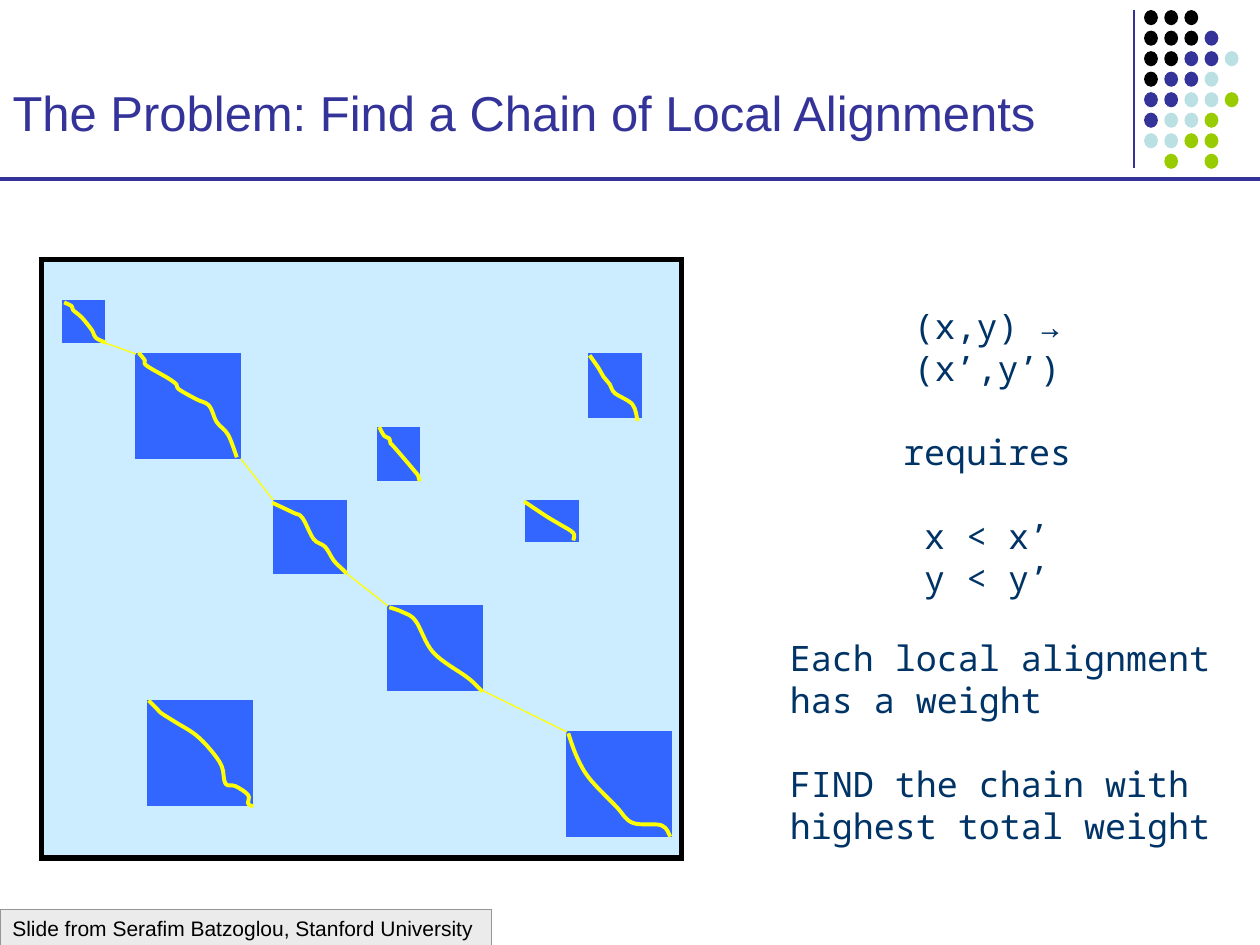
"""Build a slide about chaining local alignments in a dot plot."""
from itertools import pairwise

from lxml import etree
from pptx import Presentation
from pptx.dml.color import RGBColor
from pptx.enum import shapes, text
from pptx.oxml import ns
from pptx.util import Inches, Pt

BLACK = RGBColor(0x00, 0x00, 0x00)
INDIGO = RGBColor(0x33, 0x33, 0x99)
TEAL = RGBColor(0xBB, 0xE0, 0xE3)
GREEN = RGBColor(0x99, 0xCC, 0x00)
SILVER = RGBColor(0xC0, 0xC0, 0xC0)
GREY = RGBColor(0x96, 0x96, 0x96)
SKY = RGBColor(0xCC, 0xEC, 0xFF)
BLUE = RGBColor(0x33, 0x66, 0xFF)
YELLOW = RGBColor(0xFF, 0xFF, 0x00)
NAVY = RGBColor(0x00, 0x33, 0x66)

TITLE = "The Problem: Find a Chain of Local Alignments"
CREDIT = "Slide from Serafim Batzoglou, Stanford University"
RULE = ["(x,y) → (x’,y’)", "requires", "x < x’", "y < y’"]
GOAL = ["Each local alignment has a weight",
        "FIND the chain with highest total weight"]

DOT_COLORS = {"K": BLACK, "B": INDIGO, "T": TEAL, "G": GREEN}
DOT_ROWS = ["KKK", "KKKB", "KKBBT", "KBBT", "BBTTG", "BTTG", "TTGG", ".G.G"]
DOT_LEFT, DOT_TOP, DOT_WIDTH, DOT_HEIGHT = 9.08, 0.08, 0.11, 0.12
DOT_STEP_X, DOT_STEP_Y = 0.16, 1.14 / 7

CHAIN = [
    ((0.5, 2.39, 0.33, 0.33),
     [(0.51, 2.4), (0.57, 2.43), (0.58, 2.46), (0.65, 2.52), (0.73, 2.62),
      (0.76, 2.68), (0.84, 2.72)]),
    ((1.08, 2.81, 0.83, 0.83),
     [(1.1, 2.8), (1.15, 2.86), (1.16, 2.9), (1.33, 3), (1.4, 3.05),
      (1.42, 3.09), (1.56, 3.17), (1.66, 3.22), (1.72, 3.35), (1.81, 3.45),
      (1.88, 3.63)]),
    ((2.17, 3.97, 0.58, 0.58),
     [(2.16, 3.99), (2.33, 4.07), (2.4, 4.11), (2.49, 4.28), (2.58, 4.34),
      (2.65, 4.45), (2.72, 4.52), (2.75, 4.55)]),
    ((3.08, 4.81, 0.75, 0.67),
     [(3.09, 4.82), (3.2, 4.86), (3.3, 4.93), (3.44, 5.18), (3.7, 5.37),
      (3.77, 5.43), (3.83, 5.49)]),
    ((4.5, 5.81, 0.83, 0.83),
     [(4.51, 5.82), (4.58, 6.01), (4.68, 6.18), (4.89, 6.4), (5.02, 6.53),
      (5.25, 6.55), (5.32, 6.64)]),
]
UNCHAINED = [
    ((3, 3.39, 0.33, 0.42),
     [(3.01, 3.39), (3.05, 3.46), (3.09, 3.48), (3.1, 3.52), (3.13, 3.55),
      (3.3, 3.75), (3.32, 3.78), (3.33, 3.82)]),
    ((4.67, 2.81, 0.42, 0.5),
     [(4.68, 2.82), (4.75, 2.92), (4.79, 2.99), (4.84, 3.05), (4.88, 3.12),
      (5.02, 3.21), (5.06, 3.34)]),
    ((1.17, 5.56, 0.83, 0.83),
     [(1.18, 5.56), (1.25, 5.63), (1.28, 5.66), (1.39, 5.73), (1.55, 5.83),
      (1.67, 5.95), (1.76, 6.08), (1.79, 6.22), (1.87, 6.24), (1.97, 6.31),
      (1.97, 6.38), (2.01, 6.4)]),
    ((4.17, 3.97, 0.42, 0.33),
     [(4.16, 3.98), (4.34, 4.1), (4.44, 4.16), (4.55, 4.23), (4.55, 4.29)]),
]


def add_box(slide, kind, bounds, fill, line=None, width=0.75):
    shape = slide.shapes.add_shape(kind, *map(Inches, bounds))
    shape.shadow.inherit = False
    shape.fill.solid()
    shape.fill.fore_color.rgb = fill
    if line is None:
        shape.line.fill.background()
    else:
        shape.line.color.rgb = line
        shape.line.width = Pt(width)
        etree.SubElement(shape.line._ln, ns.qn("a:miter"), lim="800000")
    return shape


def add_line(slide, start, end, color, width):
    line = slide.shapes.add_connector(
        shapes.MSO_CONNECTOR.STRAIGHT, *map(Inches, (*start, *end)))
    line.line.color.rgb = color
    line.line.width = Pt(width)
    etree.SubElement(line._element.spPr, ns.qn("a:effectLst"))


def bend_segments(trace):
    """Turn the straight segments of a trace into smooth cubic curves."""
    nodes = list(trace._element.iter(ns.qn("a:pt")))
    points = [(int(node.get("x")), int(node.get("y"))) for node in nodes]
    padded = [points[0], *points, points[-1]]
    for node, a, b, c, d in zip(nodes[1:], padded, padded[1:], padded[2:], padded[3:]):
        segment = node.getparent()
        curve = etree.Element(ns.qn("a:cubicBezTo"))
        leaving = [q + (r - p) / 6 for p, q, r in zip(a, b, c)]
        arriving = [r - (s - q) / 6 for q, r, s in zip(b, c, d)]
        for x, y in (leaving, arriving, c):
            etree.SubElement(curve, ns.qn("a:pt"), x=str(round(x)), y=str(round(y)))
        segment.getparent().replace(segment, curve)


def add_trace(slide, points):
    start, *rest = [tuple(map(Inches, point)) for point in points]
    builder = slide.shapes.build_freeform(*start)
    builder.add_line_segments(rest, close=False)
    trace = builder.convert_to_shape()
    bend_segments(trace)
    trace.shadow.inherit = False
    trace.fill.background()
    trace.line.color.rgb = YELLOW
    trace.line.width = Pt(2.25)


def add_run(paragraph, words, font, size, color):
    run = paragraph.add_run()
    run.text = words
    run.font.name = font
    run.font.size = Pt(size)
    run.font.color.rgb = color


def add_notes_box(slide, bounds, lines, alignment, spaced):
    frame = slide.shapes.add_textbox(*map(Inches, bounds)).text_frame
    frame.word_wrap = True
    for index, words in enumerate(lines):
        paragraph = frame.add_paragraph() if index else frame.paragraphs[0]
        paragraph.alignment = alignment
        paragraph.line_spacing = Pt(24)
        paragraph.space_before = Pt(24 if index in spaced else 0)
        add_run(paragraph, words, "Noto Sans Mono", 20, NAVY)


def add_frame(slide):
    add_line(slide, (9, 0.08), (9, 1.33), INDIGO, 1.5)
    for row, codes in enumerate(DOT_ROWS):
        for column, code in enumerate(codes):
            if code in DOT_COLORS:
                bounds = (DOT_LEFT + column * DOT_STEP_X,
                          DOT_TOP + row * DOT_STEP_Y, DOT_WIDTH, DOT_HEIGHT)
                add_box(slide, shapes.MSO_SHAPE.OVAL, bounds, DOT_COLORS[code])
    add_line(slide, (0, 1.42), (10, 1.42), INDIGO, 2.25)
    credit = add_box(slide, shapes.MSO_SHAPE.RECTANGLE, (0, 7.22, 3.9, 0.3),
                     SILVER, GREY)
    color = credit._element.spPr.find(ns.qn("a:solidFill"))[0]
    etree.SubElement(color, ns.qn("a:alpha"), val="30000")
    credit.text_frame.word_wrap = False
    credit.text_frame.vertical_anchor = text.MSO_ANCHOR.TOP
    paragraph = credit.text_frame.paragraphs[0]
    paragraph.alignment = text.PP_ALIGN.LEFT
    add_run(paragraph, CREDIT, "Arial", 12, BLACK)


def add_title(slide):
    title = slide.shapes.title
    title.left, title.top, title.width, title.height = map(
        Inches, (0, 0.17, 8.92, 1))
    title.text_frame.vertical_anchor = text.MSO_ANCHOR.BOTTOM
    paragraph = title.text_frame.paragraphs[0]
    paragraph.alignment = text.PP_ALIGN.LEFT
    add_run(paragraph, TITLE, "Arial", 28, INDIGO)


def add_plot(slide):
    rectangle = shapes.MSO_SHAPE.RECTANGLE
    add_box(slide, rectangle, (0.33, 2.06, 5.08, 4.75), SKY, BLACK, 3)
    for bounds, _ in CHAIN + UNCHAINED:
        add_box(slide, rectangle, bounds, BLUE, BLUE)
    for ((left, top, width, height), _), (following, _) in pairwise(CHAIN):
        add_line(slide, (left + width, top + height), following[:2], YELLOW, 0.75)
    for _, points in CHAIN + UNCHAINED:
        add_trace(slide, points)


def main():
    presentation = Presentation()
    presentation.slide_width, presentation.slide_height = Inches(10), Inches(7.5)
    slide = presentation.slides.add_slide(presentation.slide_layouts[5])
    add_frame(slide)
    add_title(slide)
    add_plot(slide)
    add_notes_box(slide, (6.92, 2.37, 1.83, 2.1), RULE, text.PP_ALIGN.CENTER, {1, 2})
    add_notes_box(slide, (6.17, 5, 3.67, 1.77), GOAL, text.PP_ALIGN.LEFT, {1})
    presentation.save("out.pptx")


if __name__ == "__main__":
    main()
